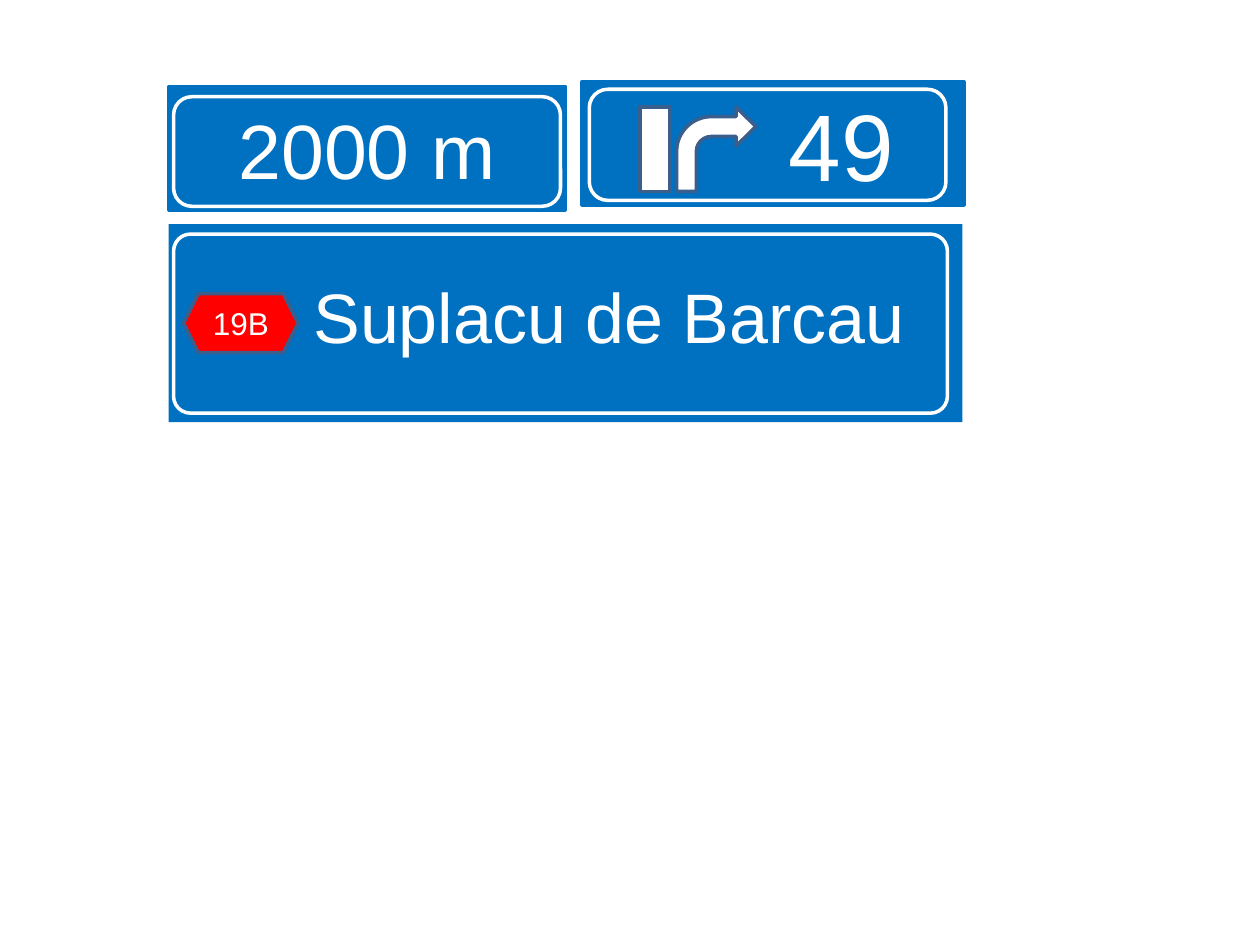
from dataclasses import dataclass

from pptx import Presentation
from pptx.dml.color import RGBColor
from pptx.enum.shapes import MSO_SHAPE
from pptx.enum.text import MSO_ANCHOR, MSO_AUTO_SIZE, PP_ALIGN
from pptx.util import Cm, Pt

RECTANGLE = MSO_SHAPE.RECTANGLE
ROUNDED = MSO_SHAPE.ROUNDED_RECTANGLE
BENT_ARROW = MSO_SHAPE.BENT_ARROW
HEXAGON = MSO_SHAPE.HEXAGON
TOP, MIDDLE = MSO_ANCHOR.TOP, MSO_ANCHOR.MIDDLE
CENTER = PP_ALIGN.CENTER
NO_FIT = MSO_AUTO_SIZE.NONE
TITLE_ONLY = 5


@dataclass(frozen=True)
class Theme:
    """Colours, font and sizes of the road sign."""
    panel: RGBColor = RGBColor(0x00, 0x70, 0xC0)
    white: RGBColor = RGBColor(0xFF, 0xFF, 0xFF)
    edge: RGBColor = RGBColor(0x3A, 0x5F, 0x8C)
    road: RGBColor = RGBColor(0xFF, 0x00, 0x00)
    font: str = "Arial"
    distance: int = 44
    exit_number: int = 54
    destination: int = 40
    road_number: int = 18
    line: int = 2


THEME = Theme()


@dataclass(frozen=True)
class Box:
    """A rectangle in centimetres."""
    left: float
    top: float
    width: float
    height: float

    def inner(self, left, top, width, height):
        """Return a box placed relative to this one."""
        return Box(self.left + left, self.top + top, width, height)

    def lengths(self):
        """Return left, top, width and height as slide lengths."""
        return [Cm(v) for v in (self.left, self.top, self.width, self.height)]


def add_part(slide, kind, box, fill, line, adjustments=()):
    """Add a flat preset shape, unfilled when fill is None."""
    part = slide.shapes.add_shape(kind, *box.lengths())
    part.shadow.inherit = False
    if fill is None:
        part.fill.background()
    else:
        part.fill.solid()
        part.fill.fore_color.rgb = fill
    part.line.color.rgb = line
    part.line.width = Pt(THEME.line)
    for index, value in enumerate(adjustments):
        part.adjustments[index] = value
    return part


def write(part, text, size, anchor=MIDDLE, insets=(0.25, 0.13, 0.25, 0.13)):
    """Write one centred white line into a shape."""
    frame = part.text_frame
    frame.word_wrap = True
    frame.auto_size = NO_FIT
    frame.vertical_anchor = anchor
    (frame.margin_left, frame.margin_top,
     frame.margin_right, frame.margin_bottom) = [Cm(v) for v in insets]
    paragraph = frame.paragraphs[0]
    paragraph.alignment = CENTER
    run = paragraph.add_run()
    run.text = text
    run.font.name = THEME.font
    run.font.size = Pt(size)
    run.font.color.rgb = THEME.white
    return paragraph


def add_border(slide, box, adjustments=()):
    """Add the white rounded outline of a panel."""
    add_part(slide, ROUNDED, box, None, THEME.white, adjustments)


def add_distance(slide, box):
    """Build the panel with the distance to the exit."""
    panel = add_part(slide, ROUNDED, box, THEME.panel, THEME.panel, [0])
    write(panel, "2000 m", THEME.distance)
    add_border(slide, box.inner(0.1, 0.2, 7.8, 2.21))


def add_exit(slide, box):
    """Build the panel with the turn symbol and the exit number."""
    panel = add_part(slide, ROUNDED, box, THEME.panel, THEME.panel, [0])
    write(panel, "49", THEME.exit_number, insets=(3, 0.13, 0.25, 0.13))
    add_part(slide, RECTANGLE, box.inner(1.17, 0.51, 0.61, 1.7),
             THEME.white, THEME.edge)
    add_part(slide, BENT_ARROW, box.inner(1.91, 0.51, 1.6, 1.7),
             THEME.white, THEME.edge, [0.25, 0.245, 0.25, 0.438])
    add_border(slide, box.inner(0.15, 0.15, 7.19, 2.24))


def add_destination(slide, box):
    """Build the panel with the road number and the destination."""
    title = slide.shapes.title
    title.left, title.top, title.width, title.height = box.lengths()
    title.fill.solid()
    title.fill.fore_color.rgb = THEME.panel
    name = write(title, "Suplacu de Barcau", THEME.destination, TOP,
                 (2, 1, 0.25, 0.6))
    name.space_before = Pt(8)
    add_border(slide, box.inner(0.1, 0.2, 15.6, 3.61), [0.095])
    road = add_part(slide, HEXAGON, box.inner(0.3, 1.4, 2.31, 1.19),
                    THEME.road, THEME.edge)
    write(road, "19B", THEME.road_number)


def main():
    """Build and save the slide."""
    deck = Presentation()
    deck.slide_width, deck.slide_height = Cm(25.4), Cm(19.05)
    slide = deck.slides.add_slide(deck.slide_layouts[TITLE_ONLY])
    add_destination(slide, Box(3.4, 4.52, 16, 3.99))
    add_distance(slide, Box(3.4, 1.75, 8, 2.49))
    add_exit(slide, Box(11.73, 1.65, 7.7, 2.49))
    deck.save("out.pptx")


if __name__ == "__main__":
    main()
